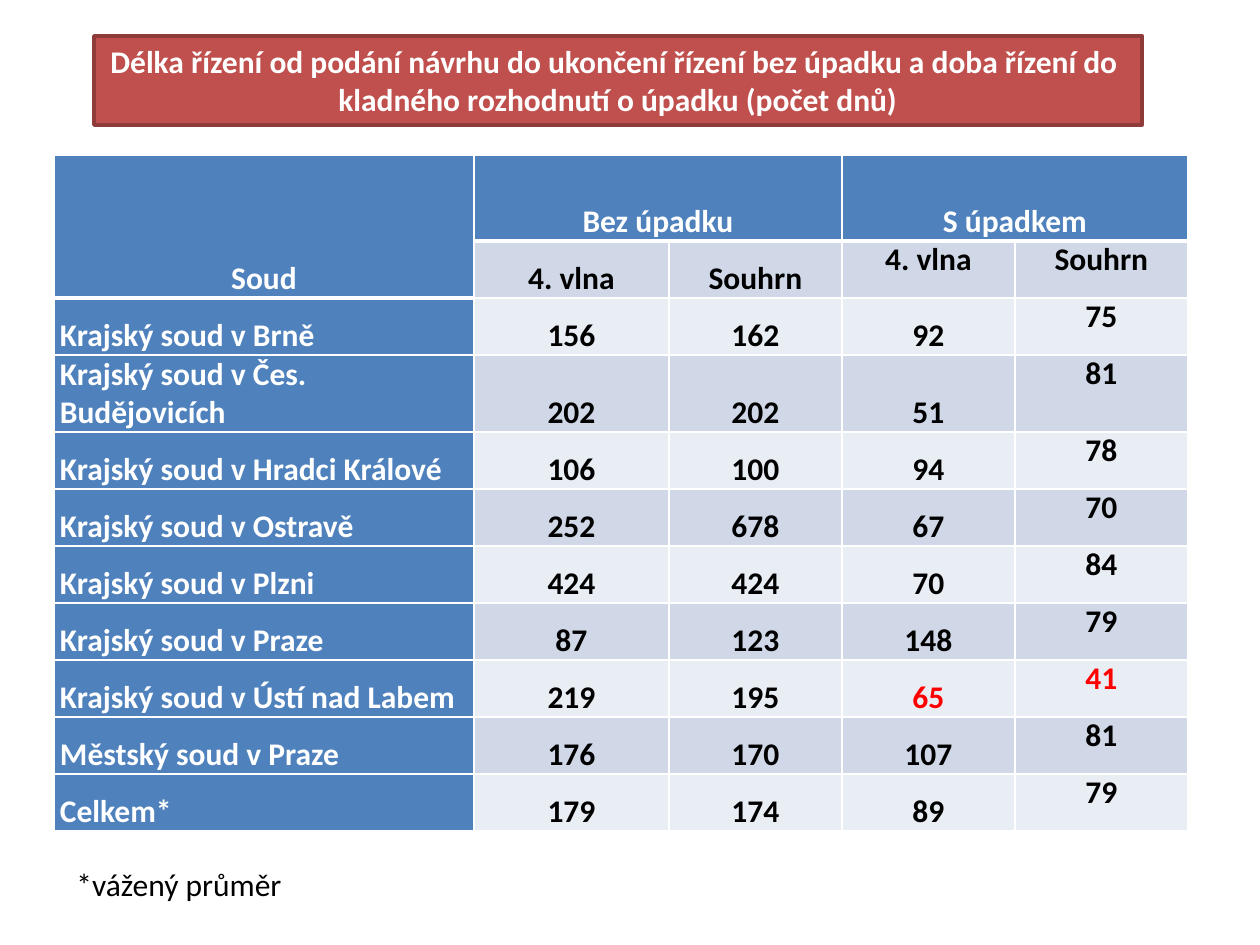
from lxml.etree import SubElement
from pptx import Presentation
from pptx.dml.color import RGBColor
from pptx.enum.text import MSO_ANCHOR, MSO_AUTO_SIZE, PP_ALIGN
from pptx.oxml.ns import qn
from pptx.util import Emu, Pt

PIXELS_PER_INCH = 126
WHITE, BLACK, RED = "FFFFFF", "000000", "FF0000"
HEADER_BLUE, BAND_DARK, BAND_LIGHT = "4F81BD", "D0D8E8", "E9EDF4"
TITLE_FILL, TITLE_LINE = "C0504D", "8E3B39"

TITLE = (
    "Délka řízení od podání návrhu do ukončení řízení bez úpadku a doba řízení do \n"
    "kladného rozhodnutí o úpadku (počet dnů)"
)
COLUMN_WIDTHS = [420, 195, 173, 173, 173]
ROW_HEIGHTS = [86, 57, 57, 75] + [57] * 7
HEADER_ROWS = [
    ["Soud", "Bez úpadku", None, "S úpadkem", None],
    [None, "4. vlna", "Souhrn", "4. vlna", "Souhrn"],
]
COURT_ROWS = [
    ["Krajský soud v Brně", 156, 162, 92, 75],
    ["Krajský soud v\u00a0Čes. Budějovicích", 202, 202, 51, 81],
    ["Krajský soud v Hradci Králové", 106, 100, 94, 78],
    ["Krajský soud v Ostravě", 252, 678, 67, 70],
    ["Krajský soud v Plzni", 424, 424, 70, 84],
    ["Krajský soud v Praze", 87, 123, 148, 79],
    ["Krajský soud v Ústí nad Labem", 219, 195, 65, 41],
    ["Městský soud v Praze", 176, 170, 107, 81],
    ["Celkem*", 179, 174, 89, 79],
]
HIGHLIGHTED_CELLS = {(8, 3), (8, 4)}


def px(length):
    """Turn whole pixels into EMU."""
    return Emu(round(length * 914400 / PIXELS_PER_INCH))


def color(value):
    """Turn a hex string into a colour."""
    return RGBColor.from_string(value)


def write_text(frame, text, size=18, font_color=BLACK, bold=False,
               align=PP_ALIGN.LEFT, space_before=0):
    """Write each line of the text as one formatted paragraph."""
    for index, line in enumerate(text.split("\n")):
        paragraph = frame.add_paragraph() if index else frame.paragraphs[0]
        paragraph.alignment = align
        paragraph.space_before = Pt(space_before)
        run = paragraph.add_run()
        run.text = line
        run.font.name = "Calibri"
        run.font.size = Pt(size)
        run.font.bold = bold
        run.font.color.rgb = color(font_color)


def set_borders(cell, top=1, bottom=1):
    """Draw white borders around a cell, with widths in points."""
    properties = cell._tc.get_or_add_tcPr()
    for side, width in (("L", 1), ("R", 1), ("T", top), ("B", bottom)):
        line = SubElement(properties, qn(f"a:ln{side}"), w=str(Pt(width)))
        fill = SubElement(line, qn("a:solidFill"))
        SubElement(fill, qn("a:srgbClr"), val=WHITE)


def format_cell(cell, row, column):
    """Set the margins, anchor, borders and fill of a cell by its place."""
    cell.margin_left = cell.margin_right = px(6)
    cell.margin_top = cell.margin_bottom = 0
    at_top = row > 0 and (column == 4 or (row, column) == (1, 3))
    cell.vertical_anchor = MSO_ANCHOR.TOP if at_top else MSO_ANCHOR.BOTTOM
    header_end = 1 if column == 0 else 0
    set_borders(cell, top=3 if row == header_end + 1 else 1,
                bottom=3 if row == header_end else 1)
    band = BAND_DARK if row % 2 else BAND_LIGHT
    cell.fill.solid()
    cell.fill.fore_color.rgb = color(HEADER_BLUE if row == 0 or column == 0 else band)


def add_court_table(slide):
    """Add the table of days by court."""
    rows = HEADER_ROWS + COURT_ROWS
    table = slide.shapes.add_table(
        len(rows), len(COLUMN_WIDTHS), px(54), px(155),
        px(sum(COLUMN_WIDTHS)), px(sum(ROW_HEIGHTS))).table
    table.first_row = table.horz_banding = False
    for column, width in zip(table.columns, COLUMN_WIDTHS):
        column.width = px(width)
    for table_row, height in zip(table.rows, ROW_HEIGHTS):
        table_row.height = px(height)
    for row, values in enumerate(rows):
        for column, value in enumerate(values):
            cell = table.cell(row, column)
            format_cell(cell, row, column)
            if value is None:
                continue
            font_color = WHITE if row == 0 or column == 0 else BLACK
            if (row, column) in HIGHLIGHTED_CELLS:
                font_color = RED
            is_court = row > 1 and column == 0
            write_text(cell.text_frame, str(value), font_color=font_color, bold=True,
                       align=PP_ALIGN.LEFT if is_court else PP_ALIGN.CENTER,
                       space_before=6)
    for first, last in (((0, 0), (1, 0)), ((0, 1), (0, 2)), ((0, 3), (0, 4))):
        table.cell(*first).merge(table.cell(*last))


def add_title(slide):
    """Place the title as a filled and outlined band."""
    title = slide.shapes.title
    title.left, title.top, title.width, title.height = map(px, (94, 36, 1048, 89))
    title.fill.solid()
    title.fill.fore_color.rgb = color(TITLE_FILL)
    title.line.color.rgb = color(TITLE_LINE)
    title.line.width = Pt(2)
    title.text_frame.word_wrap = False
    title.text_frame.auto_size = MSO_AUTO_SIZE.NONE
    title.text_frame.vertical_anchor = MSO_ANCHOR.TOP
    write_text(title.text_frame, TITLE, font_color=WHITE, bold=True,
               align=PP_ALIGN.CENTER)


def add_footnote(slide):
    """Add the note below the table."""
    note = slide.shapes.add_textbox(px(64), px(859), px(233), px(50))
    note.text_frame.word_wrap = False
    write_text(note.text_frame, "*vážený průměr")


def main():
    """Build and save the slide."""
    presentation = Presentation()
    presentation.slide_width, presentation.slide_height = px(1260), px(945)
    slide = presentation.slides.add_slide(presentation.slide_layouts[5])
    add_title(slide)
    add_court_table(slide)
    add_footnote(slide)
    presentation.save("out.pptx")


if __name__ == "__main__":
    main()
